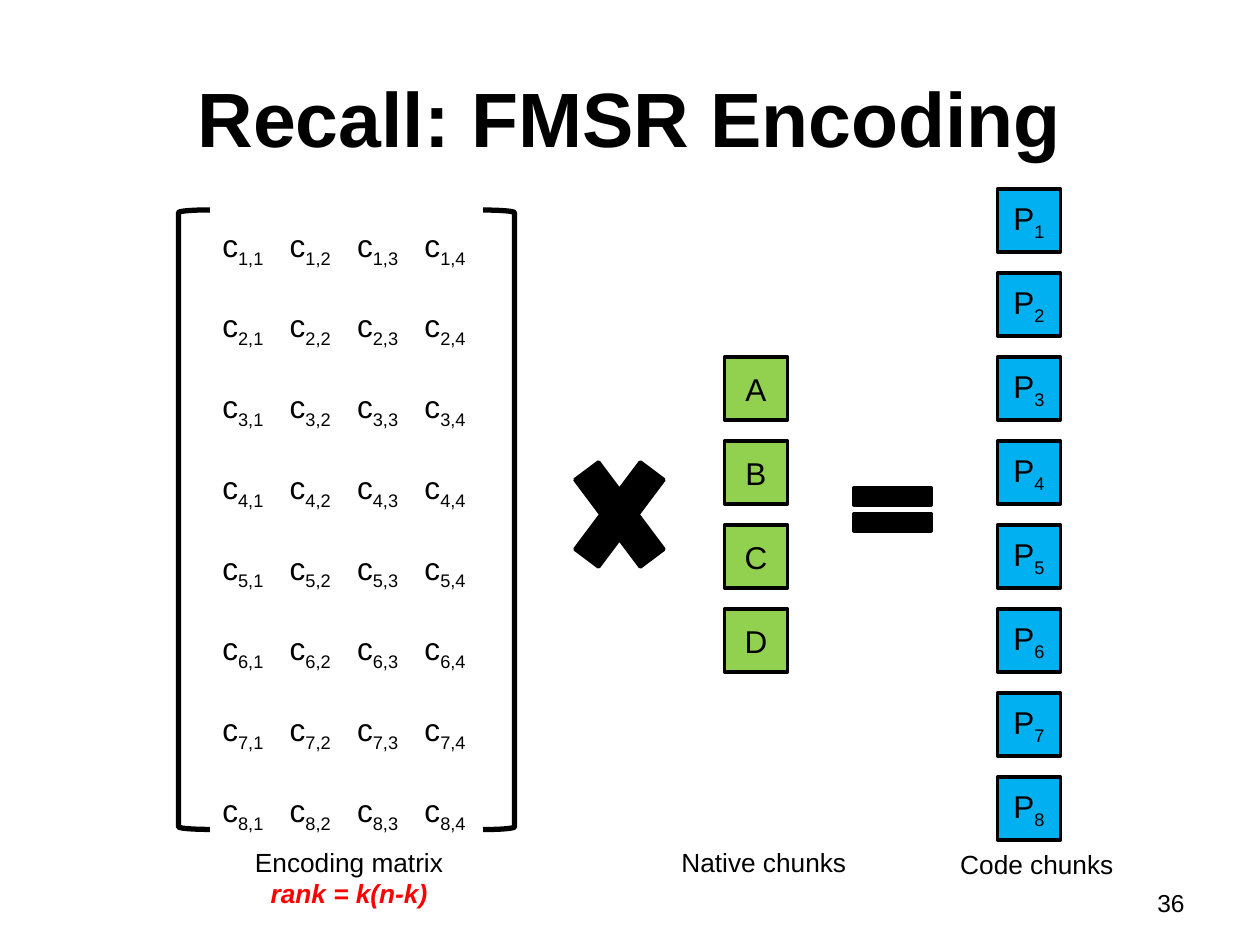
from dataclasses import dataclass

from lxml.etree import SubElement
from pptx import Presentation
from pptx.dml.color import RGBColor
from pptx.enum.shapes import MSO_SHAPE
from pptx.enum.text import MSO_ANCHOR, PP_ALIGN
from pptx.oxml.ns import qn
from pptx.util import Pt

BLACK, RED, BLUE, GREEN = "000000", "FF0000", "00B0F0", "92D050"
ROWS, COLS = 8, 4
CHUNK_SIZE, CHUNK_PITCH = 36, 48
COLUMN_PITCH = 38.5


@dataclass
class Box:
    left: float
    top: float
    width: float
    height: float

    def lengths(self):
        return Pt(self.left), Pt(self.top), Pt(self.width), Pt(self.height)


@dataclass
class ChunkColumn:
    left: float
    top: float
    fill: str
    labels: list[tuple[str, str]]  # letter and subscript


@dataclass
class Caption:
    box: Box
    text: str
    size: float = 15
    align: PP_ALIGN = PP_ALIGN.CENTER


def color(value: str) -> RGBColor:
    return RGBColor.from_string(value)


def format_run(r, size: float, subscript: bool = False) -> None:
    r.font.name = "Arial"
    r.font.size = Pt(size)
    r.font.color.rgb = color(BLACK)
    if subscript:
        r.font._element.set("baseline", "-25000")


def add_run(p, text: str, size: float = 18, subscript: bool = False):
    r = p.add_run()
    r.text = text
    format_run(r, size, subscript)
    return r


def add_outlined(s, kind: MSO_SHAPE, box: Box, fill: str | None, line_width: float = 2):
    sp = s.shapes.add_shape(kind, *box.lengths())
    sp.shadow.inherit = False
    if fill:
        sp.fill.solid()
        sp.fill.fore_color.rgb = color(fill)
    else:
        sp.fill.background()
    sp.line.color.rgb = color(BLACK)
    sp.line.width = Pt(line_width)
    return sp


def add_chunks(s, column: ChunkColumn) -> None:
    for i, (letter, index) in enumerate(column.labels):
        box = Box(column.left, column.top + i * CHUNK_PITCH, CHUNK_SIZE, CHUNK_SIZE)
        tf = add_outlined(s, MSO_SHAPE.RECTANGLE, box, column.fill).text_frame
        tf.vertical_anchor = MSO_ANCHOR.MIDDLE
        p = tf.paragraphs[0]
        p.alignment = PP_ALIGN.CENTER
        add_run(p, letter)
        if index:
            add_run(p, index, subscript=True)


def add_matrix(s, box: Box) -> None:
    """Write the coefficients, one paragraph a row, aligned by tab stops."""
    tf = s.shapes.add_textbox(*box.lengths()).text_frame
    tf.word_wrap = False
    for row in range(1, ROWS + 1):
        p = tf.paragraphs[0] if row == 1 else tf.add_paragraph()
        p.line_spacing = Pt(24)
        p.space_after = Pt(22.1)
        tabs = SubElement(p._p.get_or_add_pPr(), qn("a:tabLst"))
        for col in range(1, COLS + 1):
            if col > 1:
                stop = Pt((col - 1) * COLUMN_PITCH)
                SubElement(tabs, qn("a:tab"), pos=str(stop), algn="l")
            add_run(p, "c" if col == 1 else "\tc")
            add_run(p, f"{row},{col}", subscript=True)


def add_caption(s, caption: Caption):
    tf = s.shapes.add_textbox(*caption.box.lengths()).text_frame
    tf.word_wrap = True
    p = tf.paragraphs[0]
    p.alignment = caption.align
    add_run(p, caption.text, caption.size)
    return p


def main() -> None:
    prs = Presentation()
    prs.slide_width, prs.slide_height = Pt(720), Pt(540)
    s = prs.slides.add_slide(prs.slide_layouts[5])

    title = s.shapes.title
    title.left, title.top, title.width, title.height = Box(36, 21.6, 648, 90).lengths()
    title.text_frame.text = "Recall: FMSR Encoding"
    title.text_frame.vertical_anchor = MSO_ANCHOR.MIDDLE
    p = title.text_frame.paragraphs[0]
    p.alignment = PP_ALIGN.CENTER
    format_run(p.runs[0], 44)
    p.runs[0].font.bold = True

    code_labels = [("P", str(i)) for i in range(1, ROWS + 1)]
    native_labels = [(letter, "") for letter in "ABCD"]
    add_chunks(s, ChunkColumn(570, 108, BLUE, code_labels))
    add_chunks(s, ChunkColumn(414, 204, GREEN, native_labels))

    add_matrix(s, Box(120, 126, 168.5, 334))
    for left, rotation in ((102, 0), (276, 180)):
        box = Box(left, 120, 18, 354)
        add_outlined(s, MSO_SHAPE.LEFT_BRACKET, box, None, 3).rotation = rotation

    add_outlined(s, MSO_SHAPE.MATH_MULTIPLY, Box(318, 246, 72, 96), BLACK)
    add_outlined(s, MSO_SHAPE.MATH_EQUAL, Box(480, 270, 60, 42), BLACK)

    p = add_caption(s, Caption(Box(123, 480, 153, 44), "Encoding matrix"))
    p.add_line_break()
    rank = add_run(p, "rank = k(n-k)", 15)
    rank.font.bold = rank.font.italic = True
    rank.font.color.rgb = color(RED)

    add_caption(s, Caption(Box(360, 480, 153, 25), "Native chunks"))
    add_caption(s, Caption(Box(516, 481, 153, 25), "Code chunks"))
    add_caption(s, Caption(Box(516, 504, 168, 25), "36", 14, PP_ALIGN.RIGHT))

    prs.save("out.pptx")


if __name__ == "__main__":
    main()
